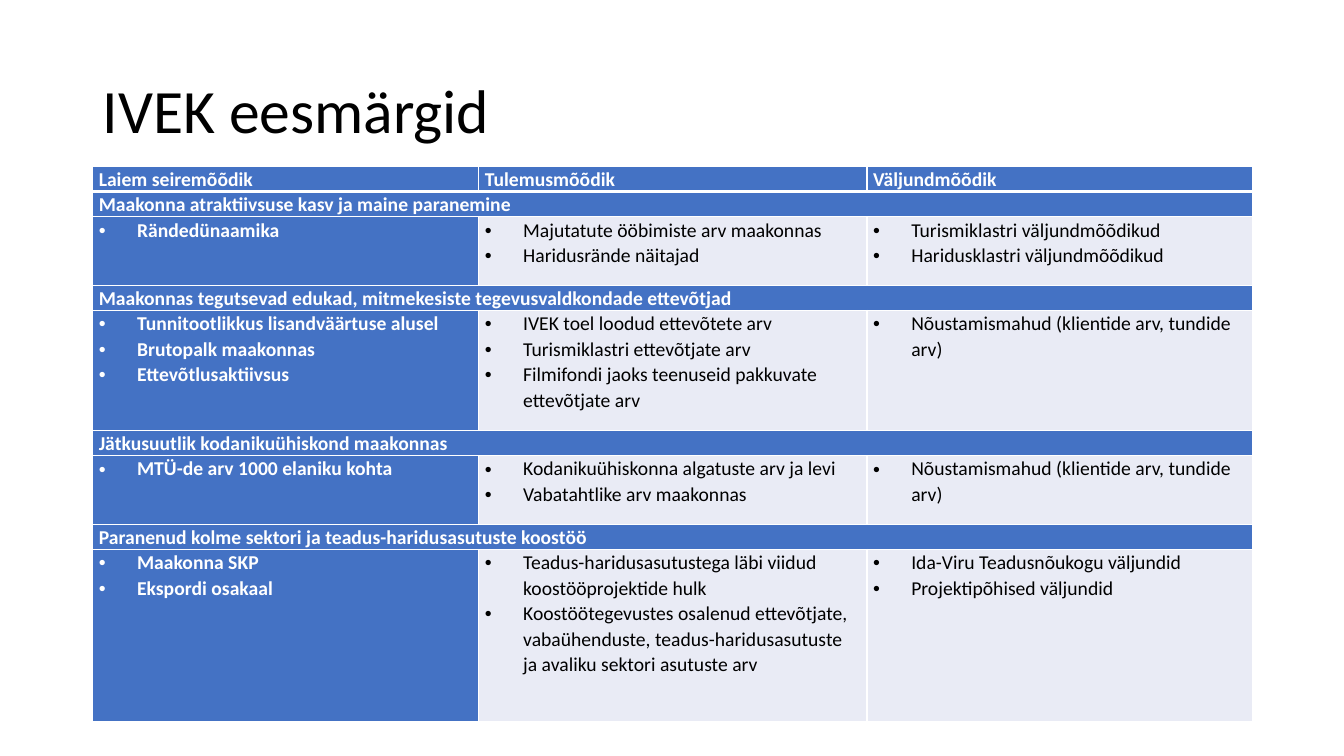
from lxml import etree
from pptx import Presentation, util as u
from pptx.dml.color import RGBColor
from pptx.enum import text
from pptx.oxml.ns import qn

BLUE, PALE, WHITE, BLACK = "4472C4", "E9EBF5", "FFFFFF", "000000"

# Column widths and row heights, in percent of the slide
COLS = [28.73, 28.88, 28.66]
BAND = 3.33

HEADS = ["Laiem seiremõõdik", "Tulemusmõõdik", "Väljundmõõdik"]

# Each goal: heading, row height, one list of measures per column
GOALS = [
    ("Maakonna atraktiivsuse kasv ja maine paranemine", 9.07, [
        ["Rändedünaamika"],
        ["Majutatute ööbimiste arv maakonnas", "Haridusrände näitajad"],
        ["Turismiklastri väljundmõõdikud", "Haridusklastri väljundmõõdikud"]]),
    ("Maakonnas tegutsevad edukad, mitmekesiste tegevusvaldkondade ettevõtjad", 15.87, [
        ["Tunnitootlikkus lisandväärtuse alusel", "Brutopalk maakonnas",
         "Ettevõtlusaktiivsus"],
        ["IVEK toel loodud ettevõtete arv", "Turismiklastri ettevõtjate arv",
         "Filmifondi jaoks teenuseid pakkuvate ettevõtjate arv"],
        ["Nõustamismahud (klientide arv, tundide arv)"]]),
    ("Jätkusuutlik kodanikuühiskond maakonnas", 9.07, [
        ["MTÜ-de arv 1000 elaniku kohta"],
        ["Kodanikuühiskonna algatuste arv ja levi", "Vabatahtlike arv maakonnas"],
        ["Nõustamismahud (klientide arv, tundide arv)"]]),
    ("Paranenud kolme sektori ja teadus-haridusasutuste koostöö", 22.8, [
        ["Maakonna SKP", "Ekspordi osakaal"],
        ["Teadus-haridusasutustega läbi viidud koostööprojektide hulk",
         "Koostöötegevustes osalenud ettevõtjate, vabaühenduste, "
         "teadus-haridusasutuste ja avaliku sektori asutuste arv"],
        ["Ida-Viru Teadusnõukogu väljundid", "Projektipõhised väljundid"]]),
]


def color(code):
    return RGBColor.from_string(code)


class Deck:
    face = "Calibri"

    def __init__(self):
        self.prs = Presentation()
        self.prs.slide_width = u.Inches(13.33)
        self.prs.slide_height = u.Inches(7.5)
        self.slide = self.prs.slides.add_slide(self.prs.slide_layouts[6])

    def wide(self, share):
        return round(self.prs.slide_width * share / 100)

    def high(self, share):
        return round(self.prs.slide_height * share / 100)

    def style(self, para, size, tone, bold=False):
        for run in para.runs:
            run.font.name = self.face
            run.font.size = u.Pt(size)
            run.font.bold = bold
            run.font.color.rgb = color(tone)

    def title(self, words, x, y, w, h):
        box = self.slide.shapes.add_textbox(
            self.wide(x), self.high(y), self.wide(w), self.high(h))
        frame = box.text_frame
        frame.word_wrap = True
        frame.vertical_anchor = text.MSO_ANCHOR.MIDDLE
        frame.text = words
        para = frame.paragraphs[0]
        para.line_spacing = 0.9
        self.style(para, 44, BLACK)

    def table(self, x, y, cols, rows):
        frame = self.slide.shapes.add_table(
            len(rows), len(cols), self.wide(x), self.high(y),
            self.wide(sum(cols)), self.high(sum(rows)))
        grid = frame.table
        for col, share in zip(grid.columns, cols):
            col.width = self.wide(share)
        for row, share in zip(grid.rows, rows):
            row.height = self.high(share)
        return grid

    def cell(self, cell, lines, fill, tone, bold, dots=False, after=0, base=1):
        cell.margin_left = cell.margin_right = u.Inches(0.06)
        cell.margin_top = cell.margin_bottom = 0
        cell.fill.solid()
        cell.fill.fore_color.rgb = color(fill)
        self.edges(cell, base)
        cell.text_frame.text = "\n".join(lines)
        for para in cell.text_frame.paragraphs:
            para.line_spacing = 1.07
            para.space_after = u.Pt(0)
            self.style(para, 14, tone, bold)
            if dots:
                self.bullet(para)
        para.space_after = u.Pt(after)

    def edges(self, cell, base):
        props = cell._tc.get_or_add_tcPr()
        for spot, (side, size) in enumerate(zip("LRTB", (1, 1, 1, base))):
            line = etree.Element(qn(f"a:ln{side}"), w=str(u.Pt(size)))
            fill = etree.SubElement(line, qn("a:solidFill"))
            etree.SubElement(fill, qn("a:srgbClr"), val=WHITE)
            props.insert(spot, line)

    def bullet(self, para):
        props = para._p.get_or_add_pPr()
        props.set("marL", str(u.Inches(0.38)))
        props.set("indent", str(-u.Inches(0.38)))
        etree.SubElement(props, qn("a:buFont"), typeface="Arial")
        etree.SubElement(props, qn("a:buChar"), char="•")


def main():
    deck = Deck()
    deck.title("IVEK eesmärgid", 6.9, 5.33, 86.27, 19.33)

    # Table frame: a header, then a band and a body row per goal
    rows = [BAND] + [share for _, tall, _ in GOALS for share in (BAND, tall)]
    grid = deck.table(6.9, 22, COLS, rows)

    # Header
    for col, head in enumerate(HEADS):
        deck.cell(grid.cell(0, col), [head], BLUE, WHITE, True, after=8, base=3)

    # Goals
    for num, (name, _, lists) in enumerate(GOALS):
        row = 2 * num + 1
        band = grid.cell(row, 0)
        band.merge(grid.cell(row, 2))
        deck.cell(band, [name], BLUE, WHITE, True, after=8)
        for col, lines in enumerate(lists):
            fill, tone = (PALE, BLACK) if col else (BLUE, WHITE)
            deck.cell(grid.cell(row + 1, col), lines, fill, tone, col == 0,
                      dots=True, after=8 if col == 2 else 0)

    deck.prs.save("out.pptx")


if __name__ == "__main__":
    main()
